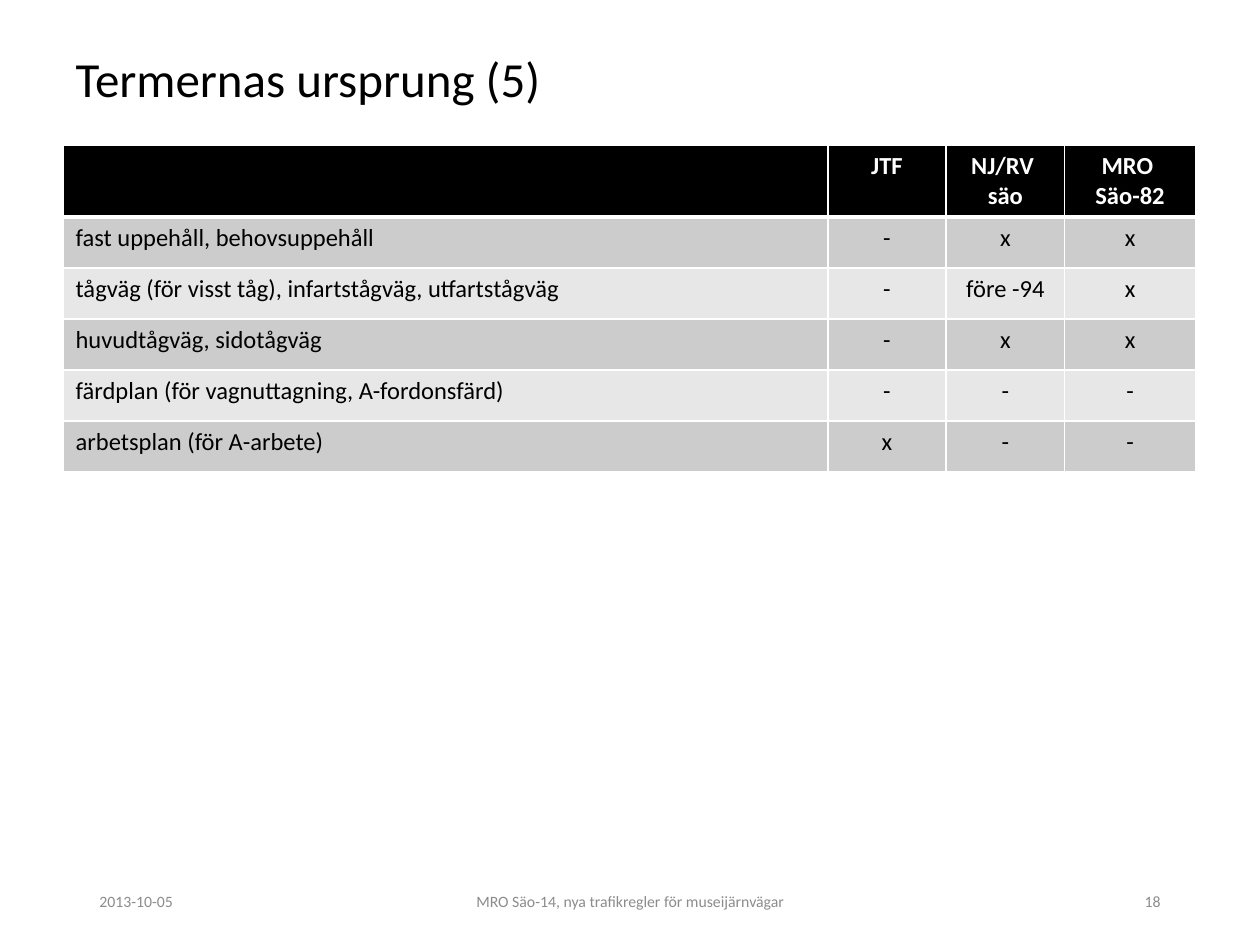
import pptx
import pptx.util
import pptx.dml.color
import pptx.enum.text
import pptx.oxml
import pptx.oxml.ns

Inches, Pt = pptx.util.Inches, pptx.util.Pt
RGB = pptx.dml.color.RGBColor.from_string
ALIGN = pptx.enum.text.PP_ALIGN
MIDDLE = pptx.enum.text.MSO_ANCHOR.MIDDLE

THEME = {
    "font": "Calibri", "ink": "000000", "paper": "FFFFFF", "muted": "8C8C8C",
    "head": "000000", "bands": ("CCCCCC", "E7E7E7"),
    "title": 28, "body": 14, "foot": 9,
}

TITLE = "Termernas ursprung (5)"
HEAD = ("", "JTF", "NJ/RV \nsäo", "MRO \nSäo-82")
ROWS = [
    ("fast uppehåll, behovsuppehåll", "-", "x", "x"),
    ("tågväg (för visst tåg), infartstågväg, utfartstågväg", "-", "före -94", "x"),
    ("huvudtågväg, sidotågväg", "-", "x", "x"),
    ("färdplan (för vagnuttagning, A-fordonsfärd)", "-", "-", "-"),
    ("arbetsplan (för A-arbete)", "x", "-", "-"),
]
FOOT = [
    ("2013-10-05", 0.69, 2.25, ALIGN.LEFT),
    ("MRO Säo-14, nya trafikregler för museijärnvägar", 3.31, 3.38, ALIGN.CENTER),
    ("18", 7.06, 2.25, ALIGN.RIGHT),
]
WIDTHS = (6.07, 0.94, 0.94, 1.04)
HEAD_H, TABLE_H = 0.57, 2.59


def write(frame, text, size, color=THEME["ink"], bold=False, align=ALIGN.LEFT, space=None):
    frame.word_wrap = True
    para = frame.paragraphs[0]
    para.alignment = align
    para.line_spacing = space
    para.font.size = Pt(size)
    para.text = text.replace("\n", "\v")
    for run in para.runs:
        font = run.font
        font.name, font.size, font.bold = THEME["font"], Pt(size), bold
        font.color.rgb = RGB(color)


def edge(cell, sides):
    """Draw cell borders; sides maps a tag to its width in points."""
    props = cell._tc.get_or_add_tcPr()
    for spot, (tag, width) in enumerate(sides.items()):
        props.insert(spot, pptx.oxml.parse_xml(
            f'<a:{tag} {pptx.oxml.ns.nsdecls("a")} w="{Pt(width)}"><a:solidFill>'
            f'<a:srgbClr val="{THEME["paper"]}"/></a:solidFill></a:{tag}>'))


def add_grid(slide):
    data = [HEAD, *ROWS]
    table = slide.shapes.add_table(
        len(data), len(HEAD), Inches(0.5), Inches(1.15),
        Inches(sum(WIDTHS)), Inches(TABLE_H)).table
    for col, width in zip(table.columns, WIDTHS):
        col.width = Inches(width)
    for r, texts in enumerate(data):
        top = r == 0
        table.rows[r].height = Inches(HEAD_H if top else (TABLE_H - HEAD_H) / len(ROWS))
        for c, text in enumerate(texts):
            cell = table.cell(r, c)
            cell.fill.solid()
            cell.fill.fore_color.rgb = RGB(THEME["head"] if top else THEME["bands"][(r - 1) % 2])
            write(cell.text_frame, text, THEME["body"], bold=top,
                  color=THEME["paper"] if top else THEME["ink"],
                  align=ALIGN.CENTER if c else ALIGN.LEFT)
            edge(cell, {"lnL": 1, "lnR": 1, "lnT": 3 if r == 1 else 1, "lnB": 3 if top else 1})


def main():
    deck = pptx.Presentation()
    deck.slide_width, deck.slide_height = Inches(10), Inches(7.5)
    slide = deck.slides.add_slide(deck.slide_layouts[5])
    title = slide.shapes.title
    title.left, title.top = Inches(0.5), Inches(0.3)
    title.width, title.height = Inches(9), Inches(0.69)
    title.text_frame.vertical_anchor = MIDDLE
    write(title.text_frame, TITLE, THEME["title"], space=0.9)
    add_grid(slide)
    for text, left, width, align in FOOT:
        box = slide.shapes.add_textbox(Inches(left), Inches(6.95), Inches(width), Inches(0.4))
        box.text_frame.vertical_anchor = MIDDLE
        write(box.text_frame, text, THEME["foot"], color=THEME["muted"], align=align)
    deck.save("out.pptx")


if __name__ == "__main__":
    main()
